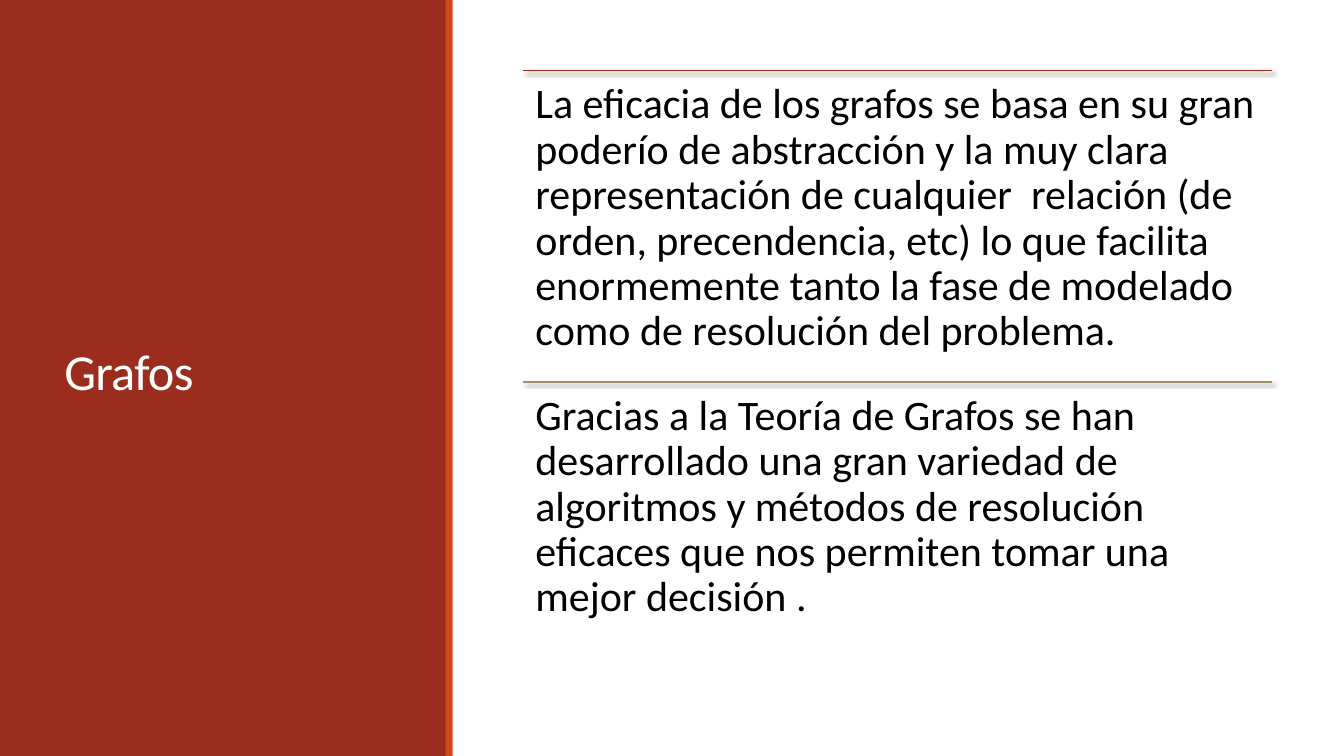
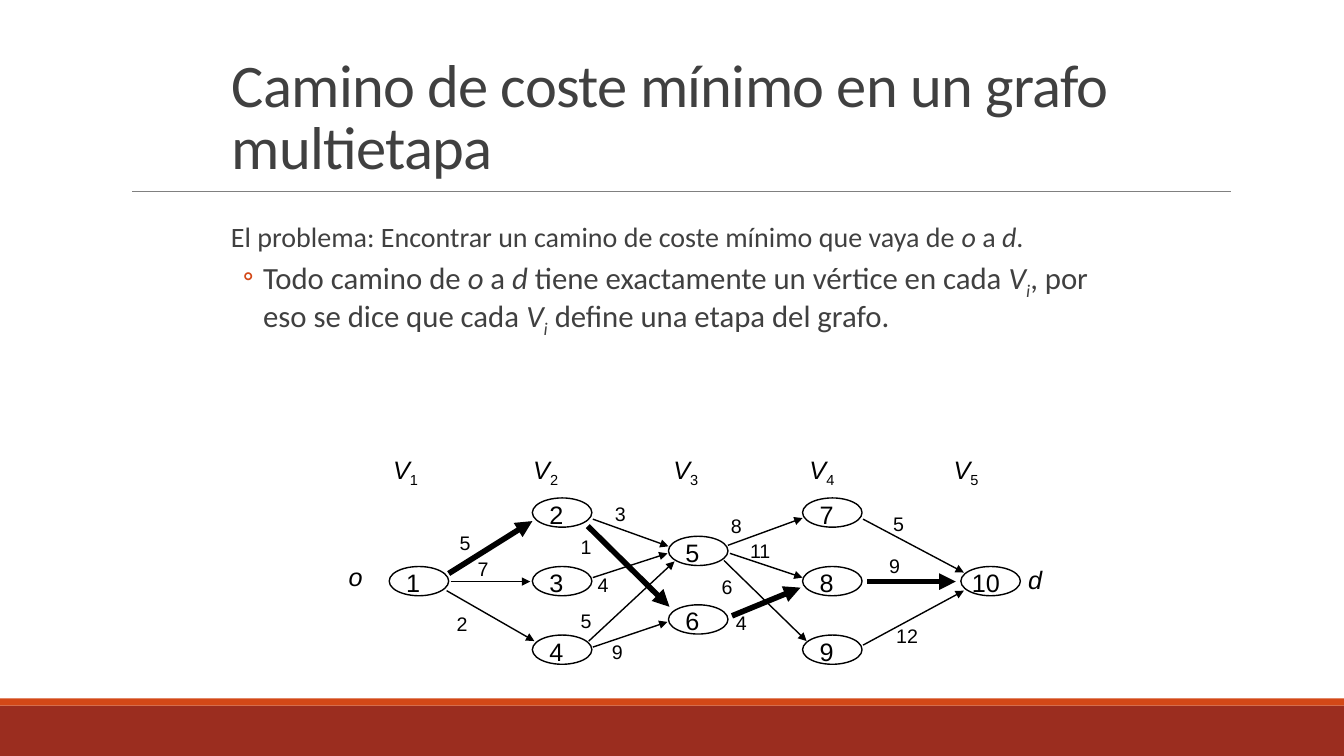
import pptx
import pptx.util
import pptx.dml.color
import pptx.enum.shapes
import pptx.enum.text
import pptx.oxml
import pptx.oxml.ns
from dataclasses import dataclass
from lxml import etree

Inches = pptx.util.Inches
Pt = pptx.util.Pt
Shape = pptx.enum.shapes.MSO_SHAPE
Anchor = pptx.enum.text.MSO_ANCHOR
qn = pptx.oxml.ns.qn


@dataclass(frozen=True)
class Theme:
    wide: float = 13.33
    high: float = 7.5
    brick: str = "9B2D1F"
    orange: str = "D34817"
    sand: str = "A28E6A"
    white: str = "FFFFFF"
    black: str = "000000"
    dark: str = "404040"
    gray: str = "808080"
    font: str = "Calibri"
    label: str = "Arial"
    title: float = 43.2
    side: float = 36
    quote: float = 30
    lead: float = 20
    point: float = 22
    node: float = 18
    cost: float = 14
    strip: float = 0.07


T = Theme()

# Text is a list of (text, style); i is italic, s is subscript.
LEAD = [("El problema: Encontrar un camino de coste mínimo que vaya de ", ""),
        ("o", "i"), (" a ", ""), ("d", "i"), (".", "")]
POINT = [("Todo camino de ", ""), ("o", "i"), (" a ", ""), ("d", "i"),
         (" tiene exactamente un vértice en cada ", ""),
         ("V", "i"), ("i", "is"), (", por eso se dice que cada ", ""),
         ("V", "i"), ("i", "is"), (" define una etapa del grafo.", "")]
QUOTES = [
    (T.brick, "La eficacia de los grafos se basa en su gran poderío de "
     "abstracción y la muy clara representación de cualquier  relación (de "
     "orden, precendencia, etc) lo que facilita enormemente tanto la fase de "
     "modelado como de resolución del problema."),
    (T.sand, "Gracias a la Teoría de Grafos se han desarrollado una gran "
     "variedad de algoritmos y métodos de resolución eficaces que nos "
     "permiten tomar una mejor decisión ."),
]

# Each stage: left of its nodes, top of the first, node count, left of its name
STAGES = [(0.5, 1.16, 1, 0.44), (1.92, 0.48, 3, 1.83), (3.27, 0.86, 2, 3.22),
          (4.6, 0.48, 3, 4.57), (6.17, 1.16, 1, 6)]
STEP = 0.68
OVAL = (0.59, 0.29)

# Each edge: start, end, cost, place of the cost, line width
THIN, BOLD = 1, 4
EDGES = [
    ((1.09, 1.23), (1.92, 0.71), 5, (1.1, 0.76), BOLD),
    ((1.11, 1.31), (1.9, 1.31), 7, (1.28, 1.02), THIN),
    ((1.07, 1.4), (1.94, 1.9), 2, (1.07, 1.56), THIN),
    ((2.52, 0.69), (3.27, 0.96), 3, (2.64, 0.47), THIN),
    ((2.47, 0.76), (3.28, 1.56), 1, (2.3, 0.8), BOLD),
    ((2.52, 1.27), (3.26, 1.03), 4, (2.47, 1.17), THIN),
    ((2.48, 1.9), (3.33, 1.11), 5, (2.3, 1.53), THIN),
    ((2.52, 1.96), (3.26, 1.71), 9, (2.61, 1.84), THIN),
    ((3.86, 0.95), (4.6, 0.68), 8, (3.79, 0.59), THIN),
    ((3.88, 1.03), (4.6, 1.27), 11, (3.98, 0.84), THIN),
    ((3.82, 1.1), (4.64, 1.9), 6, (3.7, 1.19), THIN),
    ((3.9, 1.65), (4.58, 1.37), 4, (3.84, 1.55), BOLD),
    ((5.24, 1.31), (6.12, 1.31), 9, (5.36, 0.99), BOLD),
    ((5.2, 0.69), (6.2, 1.22), 5, (5.4, 0.57), THIN),
    ((5.2, 1.94), (6.2, 1.4), 12, (5.43, 1.68), THIN),
]


def rgb(code):
    return pptx.dml.color.RGBColor.from_string(code)


def node(parent, tag, **attrs):
    """Append an XML child with the given attributes."""
    item = etree.SubElement(parent, qn(tag))
    for key, value in attrs.items():
        item.set(key, str(value))
    return item


def shape(slide, kind, box, fill=None, line=None):
    item = slide.shapes.add_shape(kind, *map(Inches, box))
    item.shadow.inherit = False
    if fill:
        item.fill.solid()
        item.fill.fore_color.rgb = rgb(fill)
    else:
        item.fill.background()
    if line:
        item.line.color.rgb = rgb(line)
        item.line.width = Pt(1)
    else:
        item.line.fill.background()
    return item


def rule(slide, start, end, color, width, arrow=False, shade=False):
    item = slide.shapes.add_connector(
        pptx.enum.shapes.MSO_CONNECTOR.STRAIGHT,
        *map(Inches, (*start, *end)))
    item.line.color.rgb = rgb(color)
    item.line.width = Pt(width)
    if arrow:
        node(item.line._get_or_add_ln(), "a:tailEnd", type="triangle")
    effects = node(item._element.spPr, "a:effectLst")
    if shade:
        cast = node(effects, "a:outerShdw", blurRad=Pt(3), dist=Pt(2),
                    dir=45 * 60000, rotWithShape=0)
        tint = node(cast, "a:srgbClr", val=T.black)
        node(tint, "a:alpha", val=60000)


def frame(slide, box, inset=(0.1, 0.05), wrap=True, anchor=Anchor.TOP):
    text = slide.shapes.add_textbox(*map(Inches, box)).text_frame
    text.word_wrap = wrap
    text.vertical_anchor = anchor
    text.margin_left = text.margin_right = Inches(inset[0])
    text.margin_top = text.margin_bottom = Inches(inset[1])
    return text


def write(para, parts, size, color, font=T.font, space=None):
    for words, style in parts:
        run = para.add_run()
        run.text = words
        run.font.size = Pt(size)
        run.font.name = font
        run.font.color.rgb = rgb(color)
        run.font.italic = "i" in style
        if "s" in style:
            run.font._element.set("baseline", "-25000")
        if space is not None:
            run.font._element.set("spc", str(round(space * 100)))
    return para


def title(slide, box, words, size, color, anchor):
    para = frame(slide, box, anchor=anchor).paragraphs[0]
    write(para, [(words, "")], size, color, space=-0.5)
    para.line_spacing = 0.85


def label(slide, left, top, parts, size=T.node):
    """Place a one-line graph label as wide as its text."""
    count = sum(len(words) for words, style in parts)
    width = 0.2 + size / 130 * count
    text = frame(slide, (left, top, width, 0.15 + size / 72), wrap=False)
    write(text.paragraphs[0], parts, size, T.black, T.label)


def panel(slide, box, words):
    left, top, width, height = box
    shape(slide, Shape.RECTANGLE, box, T.brick)
    shape(slide, Shape.RECTANGLE,
          (left + width - 0.01, top, T.strip, height), T.orange)
    title(slide, (left + 0.54, top + 0.57, width - 1.06, height - 1.19),
          words, T.side, T.white, Anchor.MIDDLE)


def quotes(slide, box):
    """Stack ruled paragraphs in equal rows."""
    left, top, width, height = box
    row = height / len(QUOTES)
    for index, (color, words) in enumerate(QUOTES):
        y = top + index * row
        rule(slide, (left, y), (left + width, y), color, 1, shade=True)
        para = frame(slide, (left, y, width, row), (0.12, 0.12)).paragraphs[0]
        write(para, [(words, "")], T.quote, T.black)
        para.line_spacing = 0.9


def footer(slide, box):
    left, top, width, height = box
    shape(slide, Shape.RECTANGLE, box, T.brick)
    shape(slide, Shape.RECTANGLE,
          (left, top - T.strip, width, T.strip), T.orange)


def body(slide, box):
    text = frame(slide, box, (0, 0.05))
    lead = write(text.paragraphs[0], LEAD, T.lead, T.dark)
    point = write(text.add_paragraph(), POINT, T.point, T.dark)
    for para, left, hang, before, after in (
            (lead, 0.1, 0, 12, 2), (point, 0.42, -0.2, 2, 4)):
        para.line_spacing = 0.9
        para.space_before = Pt(before)
        para.space_after = Pt(after)
        props = para._p.get_or_add_pPr()
        props.set("marL", str(Inches(left)))
        props.set("indent", str(Inches(hang)))
    props = point._p.get_or_add_pPr()
    node(node(props, "a:buClr"), "a:srgbClr", val=T.orange)
    node(props, "a:buFont", typeface=T.font)
    node(props, "a:buChar", char="◦")


def graph(slide, left, top):
    def at(point):
        return left + point[0], top + point[1]

    number = 0
    for stage, (x, y, count, name) in enumerate(STAGES, 1):
        label(slide, *at((name, 0)), [("V", "i"), (str(stage), "s")])
        for index in range(count):
            number += 1
            spot = y + index * STEP
            shape(slide, Shape.OVAL, (*at((x, spot)), *OVAL), line=T.black)
            shift = 0.07 if number < 10 else 0.01
            label(slide, *at((x + shift, spot - 0.04)), [(str(number), "")])
    for start, end, cost, place, width in EDGES:
        rule(slide, at(start), at(end), T.black, width, arrow=True)
        label(slide, *at(place), [(str(cost), "")], T.cost)
    label(slide, *at((0, 1.06)), [("o", "i")])
    label(slide, *at((6.74, 1.09)), [("d", "i")])


def intro(slide):
    panel(slide, (0, 0, 4.43, T.high), "Grafos")
    quotes(slide, (5.19, 0.7, 7.43, 6.18))


def route(slide):
    footer(slide, (0, 7, T.wide, 0.5))
    rule(slide, (1.31, 1.9), (12.21, 1.9), T.gray, 0.5)
    title(slide, (2.2, 0.68, 9, 1.17),
          "Camino de coste mínimo en un grafo multietapa",
          T.title, T.dark, Anchor.BOTTOM)
    body(slide, (2.19, 2.17, 9, 4.73))
    graph(slide, 3.36, 4.46)


def main():
    deck = pptx.Presentation()
    deck.slide_width = Inches(T.wide)
    deck.slide_height = Inches(T.high)
    for build in (intro, route):
        build(deck.slides.add_slide(deck.slide_layouts[6]))
    deck.save("out.pptx")


if __name__ == "__main__":
    main()
